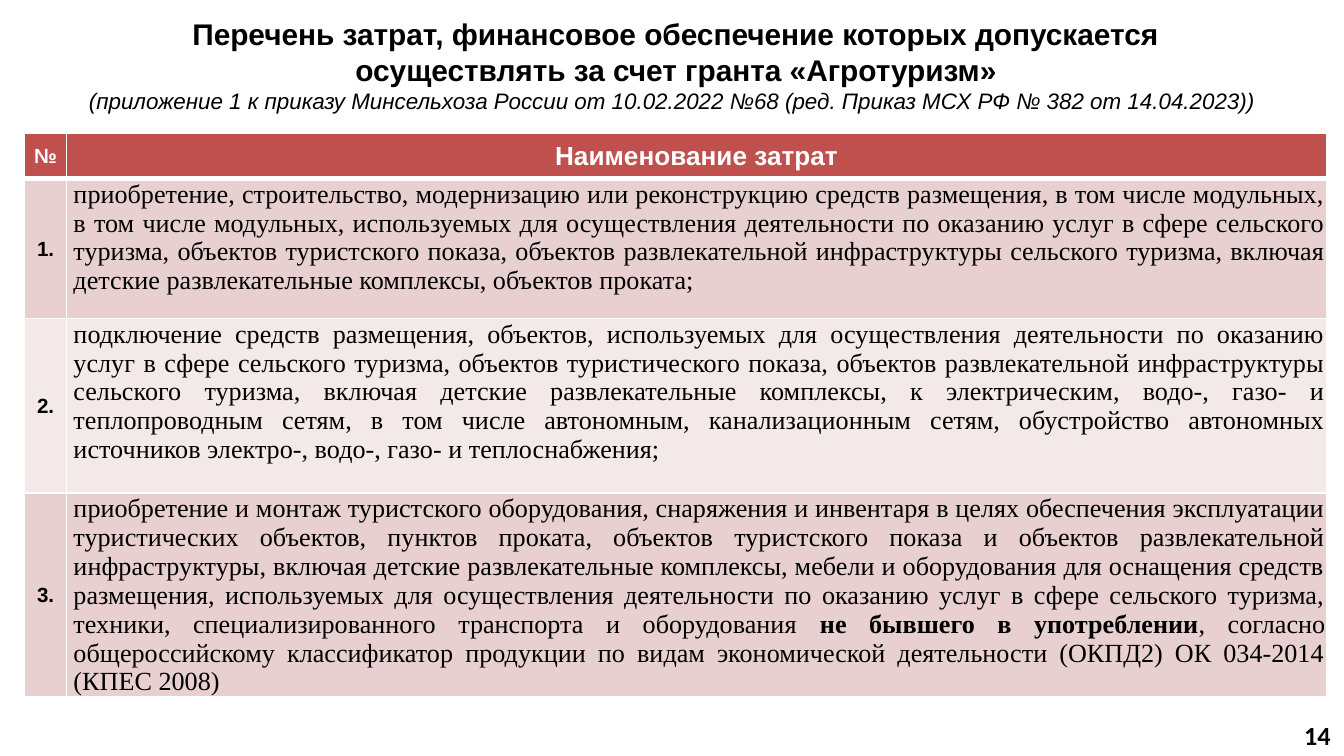
"""Build the slide listing the costs a rural tourism grant may cover."""
from dataclasses import dataclass

from lxml import etree
from pptx import Presentation
from pptx.dml.color import RGBColor
from pptx.enum.text import MSO_ANCHOR, PP_ALIGN
from pptx.oxml.ns import qn
from pptx.util import Pt

LEFT, RIGHT = PP_ALIGN.LEFT, PP_ALIGN.RIGHT
CENTER, JUSTIFY = PP_ALIGN.CENTER, PP_ALIGN.JUSTIFY
TOP, MIDDLE = MSO_ANCHOR.TOP, MSO_ANCHOR.MIDDLE


@dataclass(frozen=True)
class Theme:
    sans: str = "Arial"
    serif: str = "Times New Roman"
    page: str = "Calibri"
    ink: str = "000000"
    white: str = "FFFFFF"
    head: str = "C0504D"
    bands: tuple = ("E8D0D0", "F4E9E9")
    title: float = 16
    body: float = 14
    note: float = 12
    label: float = 11


THEME = Theme()


@dataclass(frozen=True)
class Run:
    text: str
    size: float = THEME.body
    font: str = THEME.sans
    color: str = THEME.ink
    bold: bool = True
    slant: bool = False


@dataclass(frozen=True)
class Line:
    runs: tuple
    align: PP_ALIGN = CENTER
    indent: float = 0


@dataclass(frozen=True)
class Box:
    left: float
    top: float
    width: float
    height: float
    lines: tuple
    anchor: MSO_ANCHOR = TOP


@dataclass(frozen=True)
class Cost:
    height: float
    runs: tuple


def serif(text: str, bold: bool = False) -> Run:
    """Return a run of table body text."""
    return Run(text, font=THEME.serif, bold=bold)


TITLE = Box(6.5, 5, 711, 60.5, (
    Line((Run("Перечень затрат, финансовое обеспечение которых допускается", THEME.title),)),
    Line((Run(" осуществлять за счет гранта «Агротуризм»", THEME.title), Run(" "))),
    Line((Run("(приложение 1 к приказу Минсельхоза России от 10.02.2022 №68 "
              "(ред. Приказ МСХ РФ № 382 от 14.04.2023)) ",
              THEME.note, bold=False, slant=True),)),
))
PAGE = Box(679.7, 383, 40.3, 21.6, (Line((Run("14", font=THEME.page),), RIGHT),), MIDDLE)

COLS = (22.5, 675)
HEAD = 24.5
COSTS = (
    Cost(75, (serif(
        "приобретение, строительство, модернизацию или реконструкцию средств размещения, "
        "в том числе модульных, в том числе модульных, используемых для осуществления "
        "деятельности по оказанию услуг в сфере сельского туризма, объектов туристского "
        "показа, объектов развлекательной инфраструктуры сельского туризма, включая "
        "детские развлекательные комплексы, объектов проката; "),)),
    Cost(93.5, (serif(
        "подключение средств размещения, объектов, используемых для осуществления "
        "деятельности по оказанию услуг в сфере сельского туризма, объектов "
        "туристического показа, объектов развлекательной инфраструктуры сельского "
        "туризма, включая детские развлекательные комплексы, к электрическим, водо-, "
        "газо- и теплопроводным сетям, в том числе автономным, канализационным сетям, "
        "обустройство автономных источников электро-, водо-, газо- и теплоснабжения;"),)),
    Cost(109, (
        serif(
            "приобретение и монтаж туристского оборудования, снаряжения и инвентаря в "
            "целях обеспечения эксплуатации туристических объектов, пунктов проката, "
            "объектов туристского показа и объектов развлекательной инфраструктуры, "
            "включая детские развлекательные комплексы, мебели и оборудования для "
            "оснащения средств размещения, используемых для осуществления деятельности "
            "по оказанию услуг в сфере сельского туризма, техники, специализированного "
            "транспорта и оборудования "),
        serif("не бывшего в употреблении", True),
        serif(
            ", согласно общероссийскому классификатор продукции по видам экономической "
            "деятельности (ОКПД2) ОК 034-2014 (КПЕС 2008)"),
    )),
)


def write(frame, lines: tuple) -> None:
    """Fill a text frame line by line and run by run."""
    for i, line in enumerate(lines):
        para = frame.add_paragraph() if i else frame.paragraphs[0]
        para.alignment = line.align
        if line.indent:
            para._p.get_or_add_pPr().set("marL", str(Pt(line.indent)))
        for item in line.runs:
            run = para.add_run()
            run.text = item.text
            font = run.font
            font.name, font.size = item.font, Pt(item.size)
            font.bold, font.italic = item.bold, item.slant
            font.color.rgb = RGBColor.from_string(item.color)


def edge(cell, low: float) -> None:
    """Draw white cell borders with the given lower line width."""
    props = cell._tc.get_or_add_tcPr()
    for side, width in zip("LRTB", (1, 1, 1, low)):
        line = etree.SubElement(props, qn(f"a:ln{side}"), w=str(Pt(width)))
        fill = etree.SubElement(line, qn("a:solidFill"))
        etree.SubElement(fill, qn("a:srgbClr"), val=THEME.white)


def style(cell, line: Line, fill: str, anchor: MSO_ANCHOR = MIDDLE, low: float = 1) -> None:
    """Write and format one table cell."""
    edge(cell, low)
    cell.fill.solid()
    cell.fill.fore_color.rgb = RGBColor.from_string(fill)
    cell.margin_left = cell.margin_right = cell.margin_top = Pt(0.7)
    cell.margin_bottom = Pt(0)
    cell.vertical_anchor = anchor
    write(cell.text_frame, (line,))


def grid(slide) -> None:
    """Add the table of costs."""
    total = HEAD + sum(cost.height for cost in COSTS)
    table = slide.shapes.add_table(
        len(COSTS) + 1, len(COLS), Pt(13.2), Pt(71.2), Pt(sum(COLS)), Pt(total)).table
    for col, width in zip(table.columns, COLS):
        col.width = Pt(width)
    table.rows[0].height = Pt(HEAD)
    heads = (("№", THEME.label), ("Наименование затрат", THEME.body))
    for i, (text, size) in enumerate(heads):
        line = Line((Run(text, size, color=THEME.white),))
        style(table.cell(0, i), line, THEME.head, low=3)
    for i, cost in enumerate(COSTS, 1):
        table.rows[i].height = Pt(cost.height)
        fill = THEME.bands[(i - 1) % 2]
        style(table.cell(i, 0), Line((Run(f"{i}.", THEME.label),)), fill)
        style(table.cell(i, 1), Line(cost.runs, JUSTIFY, 3), fill, TOP)


def label(slide, box: Box) -> None:
    """Add a wrapped text box."""
    shape = slide.shapes.add_textbox(
        Pt(box.left), Pt(box.top), Pt(box.width), Pt(box.height))
    frame = shape.text_frame
    frame.word_wrap = True
    frame.vertical_anchor = box.anchor
    write(frame, box.lines)


def main() -> None:
    """Build and save the slide."""
    deck = Presentation()
    deck.slide_width, deck.slide_height = Pt(720), Pt(405)
    slide = deck.slides.add_slide(deck.slide_layouts[6])
    grid(slide)
    for box in (PAGE, TITLE):
        label(slide, box)
    deck.save("out.pptx")


if __name__ == "__main__":
    main()
